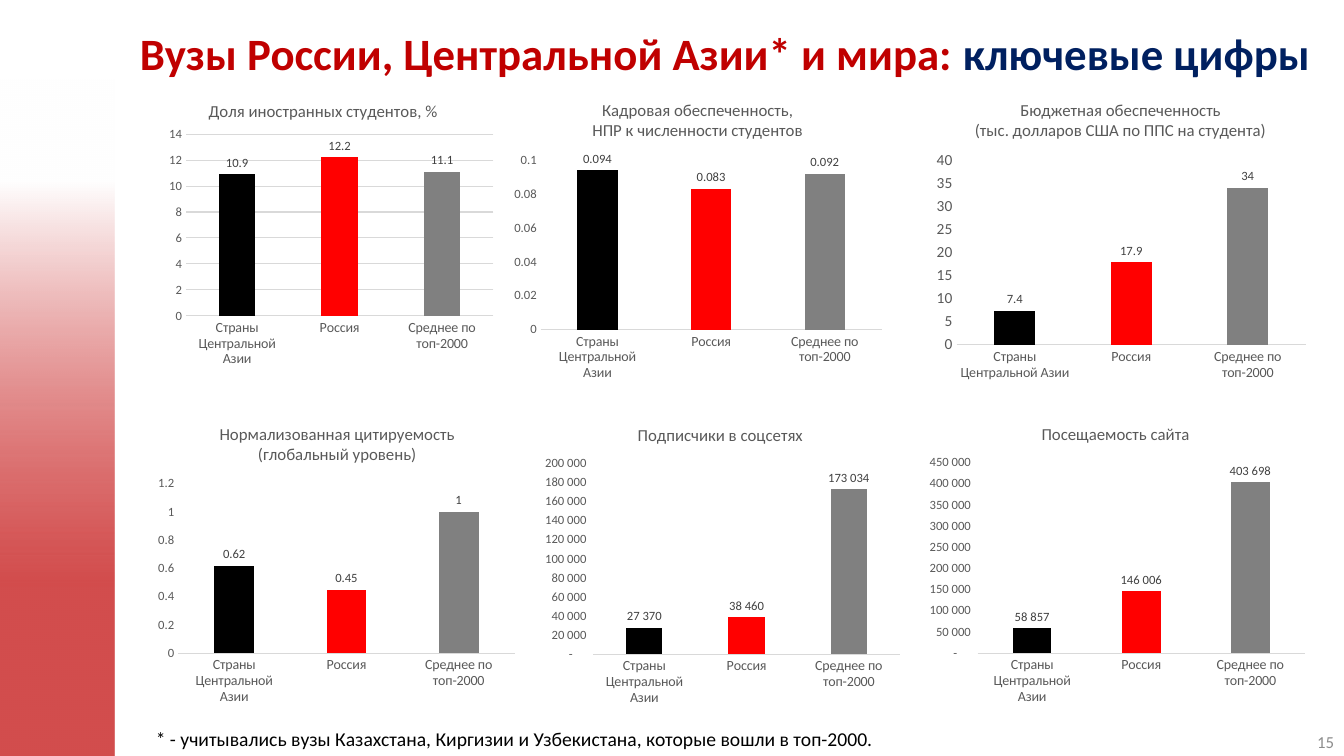
from dataclasses import dataclass
from typing import Any, Optional

from pptx import Presentation
from pptx.chart.data import CategoryChartData
from pptx.dml.color import RGBColor
from pptx.enum.chart import XL_CHART_TYPE as Chart, XL_LABEL_POSITION as LabelPos, XL_TICK_MARK as Tick
from pptx.enum.shapes import MSO_SHAPE as Shape
from pptx.enum.text import MSO_ANCHOR as Anchor, PP_ALIGN as Align
from pptx.oxml import parse_xml
from pptx.oxml.ns import nsdecls, qn
from pptx.util import Inches, Pt

FONT = "Calibri"
RED, NAVY, BLACK = "C00000", "002060", "000000"
GREY, LABEL, LINE = "595959", "404040", "D9D9D9"
BARS = {"Страны Центральной Азии": BLACK, "Россия": "FF0000", "Среднее по топ-2000": "808080"}
THOUSANDS = '_-* #\\ ##0_-;\\-* #\\ ##0_-;_-* "-"??_-;_-@_-'


@dataclass
class Run:
    text: str
    size: float
    color: str
    bold: bool = False


@dataclass
class BarChart:
    title: str
    box: tuple[float, float, float, float]
    plot: tuple[float, float, float, float]
    values: tuple[float, ...]
    top: float
    step: float
    fmt: str = "General"
    axis_size: float = 9
    grid: bool = False


CHARTS = [
    BarChart("Доля иностранных студентов, %", (1.39, 0.85, 3.63, 2.97),
             (0.125, 0.162, 0.84, 0.607), (10.9, 12.2, 11.1), 14, 2, grid=True),
    BarChart("Кадровая обеспеченность,\nНПР к численности студентов", (5.02, 0.84, 3.8, 3),
             (0.09, 0.25, 0.89, 0.56), (0.094, 0.083, 0.092), 0.1, 0.02),
    BarChart("Бюджетная обеспеченность\n(тыс. долларов США по ППС на студента)", (9.2, 0.84, 3.83, 3),
             (0.075, 0.25, 0.905, 0.61), (7.4, 17.9, 34), 40, 5, axis_size=11),
    BarChart("Нормализованная цитируемость\n(глобальный уровень)", (1.51, 4.05, 3.67, 3),
             (0.07, 0.25, 0.91, 0.56), (0.62, 0.45, 1), 1.2, 0.2),
    BarChart("Подписчики в соцсетях", (5.29, 4.06, 3.71, 3),
             (0.16, 0.18, 0.82, 0.63), (27370, 38460, 173034), 200000, 20000, THOUSANDS),
    BarChart("Посещаемость сайта", (9.11, 4.05, 3.91, 3),
             (0.15, 0.18, 0.83, 0.63), (58857, 146006, 403698), 450000, 50000, THOUSANDS),
]


def rgb(color: str) -> RGBColor:
    return RGBColor.from_string(color)


def apply(obj: Any, values: dict[str, Any]) -> None:
    for name, value in values.items():
        setattr(obj, name, value)


def set_font(font: Any, size: float, color: str, bold: bool = False) -> None:
    apply(font, {"name": FONT, "size": Pt(size), "bold": bold})
    font.color.rgb = rgb(color)


def set_line(line: Any) -> None:
    line.color.rgb = rgb(LINE)
    line.width = Pt(0.75)


def add_text(s: Any, box: tuple[float, ...], runs: list[Run], anchor: Any = Anchor.TOP,
             align: Any = Align.LEFT, spacing: Optional[float] = None) -> None:
    tf = s.shapes.add_textbox(*map(Inches, box)).text_frame
    apply(tf, {"word_wrap": True, "vertical_anchor": anchor})
    p = tf.paragraphs[0]
    apply(p, {"alignment": align, "line_spacing": spacing})
    for run in runs:
        r = p.add_run()
        r.text = run.text
        set_font(r.font, run.size, run.color, run.bold)


def add_side_band(s: Any) -> None:
    sp = s.shapes.add_shape(Shape.RECTANGLE, *map(Inches, (0, 0.79, 1.14, 6.71)))
    sp.shadow.inherit = False
    sp.line.fill.background()
    sp.fill.gradient()
    sp.fill.gradient_angle = 270
    stops = sp.fill.gradient_stops
    for stop, position, color in zip(stops, (0.15, 0.75), ("FFFFFF", RED)):
        stop.position = position
        stop.color.rgb = rgb(color)
    red = sp.fill._xPr.findall(".//" + qn("a:srgbClr"))[-1]
    red.append(parse_xml(f'<a:alpha {nsdecls("a")} val="70000"/>'))


def set_plot_area(chart: Any, plot: tuple[float, ...]) -> None:
    area = chart._chartSpace.chart.plotArea
    for old in area.findall(qn("c:layout")):
        area.remove(old)
    sizes = "".join(f'<c:{tag} val="{value}"/>' for tag, value in zip("xywh", plot))
    area.insert(0, parse_xml(
        f'<c:layout {nsdecls("c")}><c:manualLayout><c:layoutTarget val="inner"/>'
        f'<c:xMode val="edge"/><c:yMode val="edge"/>{sizes}</c:manualLayout></c:layout>'))


def add_bar_chart(s: Any, spec_: BarChart) -> None:
    data = CategoryChartData(number_format=spec_.fmt)
    data.categories = list(BARS)
    data.add_series("Series 1", spec_.values)
    chart = s.shapes.add_chart(Chart.COLUMN_CLUSTERED, *map(Inches, spec_.box), data).chart
    apply(chart, {"has_legend": False, "has_title": True})
    set_font(chart.font, 10, BLACK)
    set_plot_area(chart, spec_.plot)

    # Title
    chart.chart_title.include_in_layout = False
    tf = chart.chart_title.text_frame
    tf.text = spec_.title
    for p in tf.paragraphs:
        set_font(p.font, 12, GREY)
        for r in p.runs:
            set_font(r.font, 12, GREY)

    # Axes
    cat, val = chart.category_axis, chart.value_axis
    for axis, size in ((cat, 10), (val, spec_.axis_size)):
        apply(axis, {"major_tick_mark": Tick.NONE, "minor_tick_mark": Tick.NONE})
        set_font(axis.tick_labels.font, size, GREY)
    set_line(cat.format.line)
    val.format.line.fill.background()
    apply(val, {"minimum_scale": 0, "maximum_scale": spec_.top, "major_unit": spec_.step,
                "has_major_gridlines": spec_.grid})
    apply(val.tick_labels, {"number_format": spec_.fmt, "number_format_is_linked": False})
    if spec_.grid:
        set_line(val.major_gridlines.format.line)

    # Bars and labels
    plot = chart.plots[0]
    apply(plot, {"gap_width": 182, "vary_by_categories": False})
    series = plot.series[0]
    for i, color in enumerate(BARS.values()):
        fill = series.points[i].format.fill
        fill.solid()
        fill.fore_color.rgb = rgb(color)
    labels = series.data_labels
    apply(labels, {"show_value": True, "position": LabelPos.OUTSIDE_END,
                   "number_format": spec_.fmt, "number_format_is_linked": False})
    set_font(labels.font, 9, LABEL)


def main() -> None:
    prs = Presentation()
    apply(prs, {"slide_width": Inches(13.33), "slide_height": Inches(7.5)})
    s = prs.slides.add_slide(prs.slide_layouts[6])

    # Band, heading and slide number
    add_side_band(s)
    add_text(s, (1.29, 0.09, 12.26, 0.76),
             [Run("Вузы России, Центральной Азии* и мира: ", 32, RED, True),
              Run("ключевые цифры", 32, NAVY, True)], Anchor.MIDDLE, spacing=1.2)
    add_text(s, (10.33, 7.16, 3, 0.4), [Run("15", 12, "8C8C8C")], Anchor.MIDDLE, Align.RIGHT)

    # Charts
    for bar_chart in CHARTS:
        add_bar_chart(s, bar_chart)

    # Footnote
    add_text(s, (1.39, 7.11, 8.6, 0.4),
             [Run(" ", 18, BLACK),
              Run("* - учитывались вузы Казахстана, Киргизии и Узбекистана, "
                  "которые вошли в топ-2000.", 14, BLACK)])
    prs.save("out.pptx")


if __name__ == "__main__":
    main()
